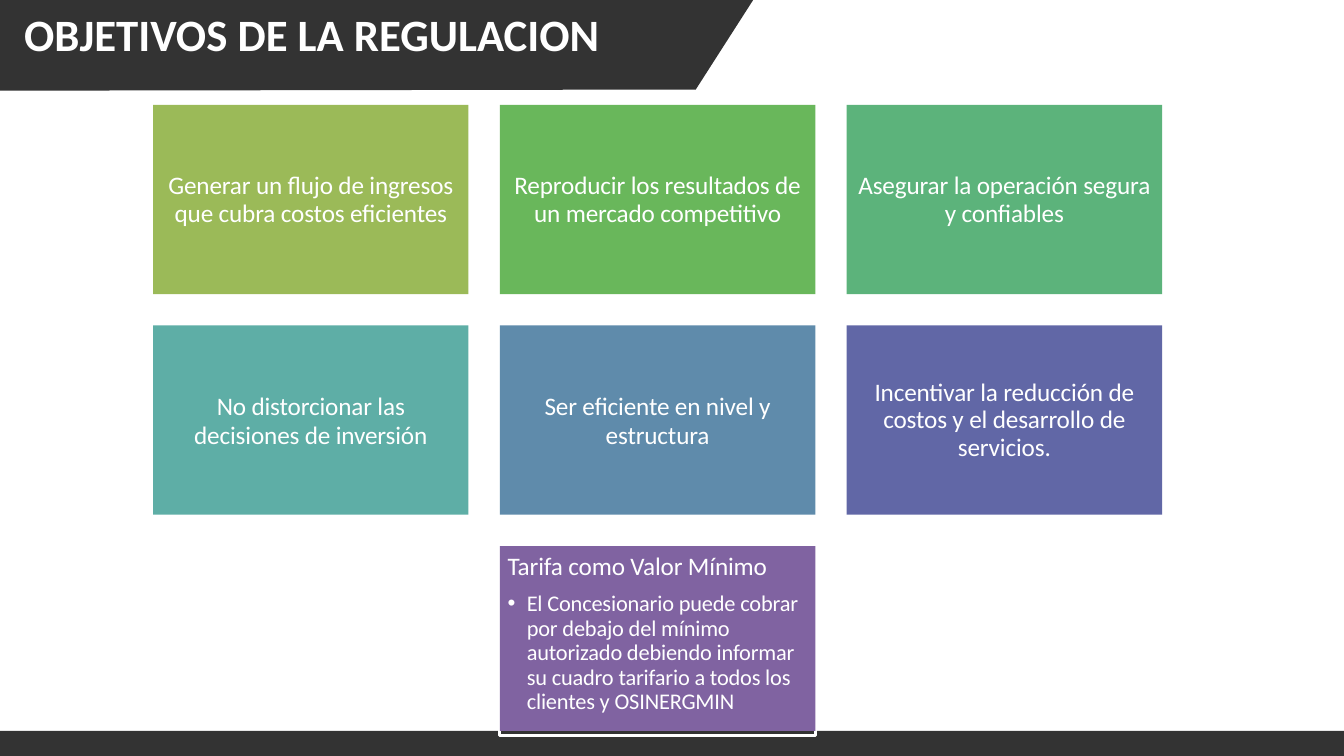
"""Build the slide on the objectives of regulation."""
from lxml import etree
from pptx import Presentation
from pptx.dml.color import RGBColor
from pptx.enum.shapes import MSO_SHAPE
from pptx.enum.text import MSO_ANCHOR, PP_ALIGN
from pptx.oxml.ns import qn
from pptx.util import Pt

RECTANGLE = MSO_SHAPE.RECTANGLE
TOP, MIDDLE = MSO_ANCHOR.TOP, MSO_ANCHOR.MIDDLE
LEFT, CENTER = PP_ALIGN.LEFT, PP_ALIGN.CENTER

WHITE = RGBColor(0xFF, 0xFF, 0xFF)
CHARCOAL = RGBColor(0x33, 0x33, 0x33)
OLIVE = RGBColor(0x9B, 0xBA, 0x58)
GREEN = RGBColor(0x69, 0xB7, 0x5B)
EMERALD = RGBColor(0x5C, 0xB3, 0x7B)
TEAL = RGBColor(0x5E, 0xAE, 0xA6)
BLUE = RGBColor(0x5F, 0x8B, 0xAB)
INDIGO = RGBColor(0x61, 0x67, 0xA6)
PURPLE = RGBColor(0x80, 0x63, 0xA1)

GRID_LEFT, GRID_TOP = 109.4, 74.9
STEP_X, STEP_Y = 247.7, 157.6
CARD_WIDTH, CARD_HEIGHT = 225.3, 135.2
TARIFF_HEIGHT = 132

OBJECTIVES = [
    (OLIVE, 19.8, ["Generar un flujo de ingresos", "que cubra costos eficientes"]),
    (GREEN, 19.8, ["Reproducir los resultados de", "un mercado competitivo"]),
    (EMERALD, 19.8, ["Asegurar la operación segura", "y confiables"]),
    (TEAL, 20.7, ["No distorcionar las", "decisiones de inversión"]),
    (BLUE, 20.7, ["Ser eficiente en nivel y", "estructura"]),
    (INDIGO, 19.8, ["Incentivar la reducción de", "costos y el desarrollo de", "servicios."]),
]
TARIFF_DETAIL = [
    "El Concesionario puede cobrar",
    "por debajo del mínimo",
    "autorizado debiendo informar",
    "su cuadro tarifario a todos los",
    "clientes y OSINERGMIN",
]


class RegulationSlide:
    """Hold the shared style and the slide being drawn."""

    font_name = "Calibri"
    text_color = WHITE

    def __init__(self, slide):
        self.shapes = slide.shapes

    def paint(self, shape, fill=None, line=None):
        shape.shadow.inherit = False
        if fill is None:
            shape.fill.background()
        else:
            shape.fill.solid()
            shape.fill.fore_color.rgb = fill
        if line is None:
            shape.line.fill.background()
        else:
            shape.line.color.rgb = line
            shape.line.width = Pt(2)
        return shape

    def rectangle(self, x, y, width, height, fill=None, line=None):
        shape = self.shapes.add_shape(RECTANGLE, Pt(x), Pt(y), Pt(width), Pt(height))
        return self.paint(shape, fill, line)

    def polygon(self, corners, fill):
        (x, y), *others = [(Pt(x), Pt(y)) for x, y in corners]
        builder = self.shapes.build_freeform(x, y)
        builder.add_line_segments(others)
        return self.paint(builder.convert_to_shape(), fill)

    def text_box(self, x, y, width, height):
        return self.shapes.add_textbox(Pt(x), Pt(y), Pt(width), Pt(height))

    def frame(self, shape, anchor=TOP, top=0):
        frame = shape.text_frame
        frame.word_wrap = True
        frame.vertical_anchor = anchor
        frame.margin_left = frame.margin_right = frame.margin_bottom = 0
        frame.margin_top = Pt(top)
        return frame

    def put_text(self, paragraph, lines, size=18, bold=False, align=LEFT, spacing=None,
                 before=0, margin=0, indent=0, bullet=None, tracking=-0.1):
        properties = paragraph._p.get_or_add_pPr()
        properties.set("marL", str(Pt(margin)))
        properties.set("indent", str(Pt(indent)))
        if bullet:
            etree.SubElement(properties, qn("a:buFont")).set("typeface", "Arial")
            etree.SubElement(properties, qn("a:buChar")).set("char", bullet)
        paragraph.alignment = align
        if spacing:
            paragraph.line_spacing = Pt(spacing)
        if before:
            paragraph.space_before = Pt(before)
        for number, line in enumerate(lines):
            if number:
                paragraph.add_line_break()
            run = paragraph.add_run()
            run.text = line
            run.font.name = self.font_name
            run.font.size = Pt(size)
            run.font.bold = bold
            run.font.color.rgb = self.text_color
            run._r.get_or_add_rPr().set("spc", str(round(tracking * 100)))

    def card(self, column, row, fill, spacing, lines):
        shape = self.rectangle(GRID_LEFT + column * STEP_X, GRID_TOP + row * STEP_Y,
                               CARD_WIDTH, CARD_HEIGHT, fill)
        frame = self.frame(shape, MIDDLE)
        self.put_text(frame.paragraphs[0], lines, align=CENTER, spacing=spacing)

    def tariff_card(self, column, row):
        x, y = GRID_LEFT + column * STEP_X, GRID_TOP + row * STEP_Y
        self.rectangle(x, y, CARD_WIDTH, CARD_HEIGHT, line=WHITE)
        frame = self.frame(self.rectangle(x, y, CARD_WIDTH, TARIFF_HEIGHT, PURPLE), top=3)
        self.put_text(frame.paragraphs[0], ["Tarifa como Valor Mínimo"], margin=5.5)
        self.put_text(frame.add_paragraph(), TARIFF_DETAIL, size=16, spacing=17.5,
                      before=7.9, margin=19.2, indent=-13.7, bullet="•")


def main():
    presentation = Presentation()
    presentation.slide_width, presentation.slide_height = Pt(960), Pt(540)
    page = RegulationSlide(presentation.slides.add_slide(presentation.slide_layouts[6]))

    page.polygon([(0, 0), (538, 0), (497, 64), (0, 64.8)], CHARCOAL)
    page.rectangle(0, 522, 960, 18, CHARCOAL)
    for number, (fill, spacing, lines) in enumerate(OBJECTIVES):
        row, column = divmod(number, 3)
        page.card(column, row, fill, spacing, lines)
    page.tariff_card(1, 2)
    heading = page.frame(page.text_box(17.3, 4.5, 924.5, 39))
    page.put_text(heading.paragraphs[0], ["OBJETIVOS DE LA REGULACION"],
                  size=32, bold=True, tracking=0)

    presentation.save("out.pptx")


if __name__ == "__main__":
    main()
